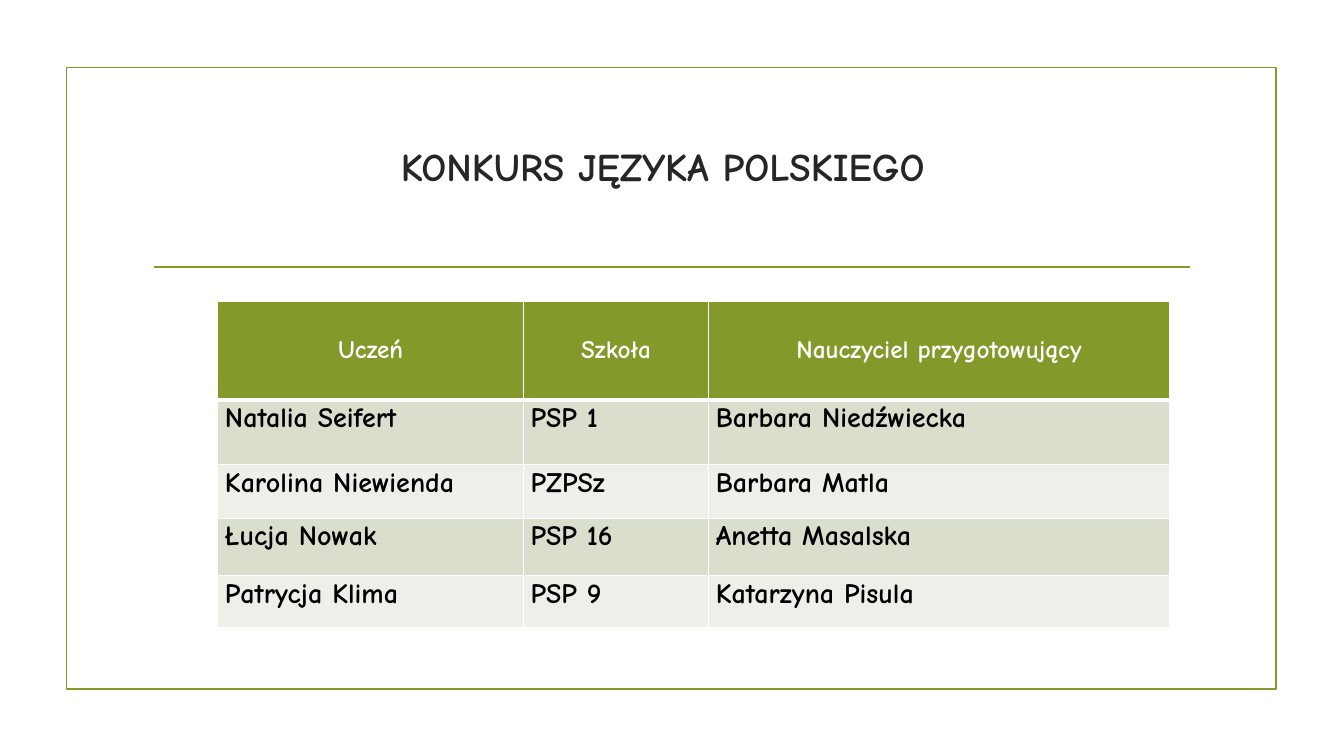
from lxml.etree import SubElement
from pptx import Presentation
from pptx.dml.color import RGBColor
from pptx.enum.shapes import MSO_CONNECTOR, MSO_SHAPE
from pptx.enum.text import MSO_ANCHOR, MSO_AUTO_SIZE, PP_ALIGN
from pptx.oxml.ns import qn
from pptx.util import Cm, Pt

FONT = "Comic Neue"
OLIVE = "83992A"
WHITE = "FFFFFF"
BANDS = ("D9DECD", "EDEFE8")
COLUMN_WIDTHS = (7.7, 4.67, 11.61)
ROW_HEIGHTS = (2.49, 1.63, 1.35, 1.45, 1.3)
RESULTS = (
    ("Uczeń", "Szkoła", "Nauczyciel przygotowujący"),
    ("Natalia Seifert", "PSP 1", "Barbara Niedźwiecka"),
    ("Karolina Niewienda", "PZPSz", "Barbara Matla"),
    ("Łucja Nowak", "PSP 16", "Anetta Masalska"),
    ("Patrycja Klima", "PSP 9", "Katarzyna Pisula"),
)


def color(hex_code):
    """Turn a hex string into a colour."""
    return RGBColor.from_string(hex_code)


def write(text_frame, text, size, hex_code, alignment):
    """Put one bold run into the first paragraph and return that paragraph."""
    paragraph = text_frame.paragraphs[0]
    paragraph.alignment = alignment
    run = paragraph.add_run()
    run.text = text
    run.font.name = FONT
    run.font.size = Pt(size)
    run.font.bold = True
    run.font.color.rgb = color(hex_code)
    return paragraph


def draw_frame(slide, left, top, width, height):
    """Draw the olive frame and the rule under the heading."""
    frame = slide.shapes.add_shape(
        MSO_SHAPE.RECTANGLE, Cm(left), Cm(top), Cm(width), Cm(height))
    frame.shadow.inherit = False
    frame.fill.background()
    rule_y = Cm(top + 5.03)
    rule = slide.shapes.add_connector(
        MSO_CONNECTOR.STRAIGHT, Cm(left + 2.2), rule_y, Cm(left + width - 2.16), rule_y)
    SubElement(rule.element.spPr, qn("a:effectLst"))
    for outline in (frame.line, rule.line):
        outline.color.rgb = color(OLIVE)
        outline.width = Pt(1.25)


def place_heading(slide, left, top, width, height):
    """Fill the title placeholder with the name of the contest."""
    heading = slide.shapes.title
    heading.left, heading.top = Cm(left), Cm(top)
    heading.width, heading.height = Cm(width), Cm(height)
    text_frame = heading.text_frame
    text_frame.auto_size = MSO_AUTO_SIZE.NONE
    text_frame.word_wrap = True
    text_frame.vertical_anchor = MSO_ANCHOR.MIDDLE
    write(text_frame, "KONKURS JĘZYKA POLSKIEGO", 28, "262626", PP_ALIGN.CENTER)


def add_borders(cell, top, bottom):
    """Give a cell white borders with the given top and bottom widths."""
    properties = cell._tc.get_or_add_tcPr()
    for side, width in (("L", 1), ("R", 1), ("T", top), ("B", bottom)):
        border = SubElement(properties, qn(f"a:ln{side}"), w=str(Pt(width)))
        fill = SubElement(border, qn("a:solidFill"))
        SubElement(fill, qn("a:srgbClr"), val=WHITE)


def format_cell(cell, text, row):
    """Write and style a cell of the header or of a banded row."""
    is_header = row == 0
    add_borders(cell, 3 if row == 1 else 1, 3 if is_header else 1)
    cell.fill.solid()
    cell.fill.fore_color.rgb = color(OLIVE if is_header else BANDS[(row - 1) % 2])
    cell.margin_left = cell.margin_right = Cm(0.2 if is_header else 0.18)
    cell.margin_top = cell.margin_bottom = Cm(0.13 if is_header else 0)
    if is_header:
        cell.vertical_anchor = MSO_ANCHOR.MIDDLE
        write(cell.text_frame, text, 18, WHITE, PP_ALIGN.CENTER)
    else:
        cell.vertical_anchor = MSO_ANCHOR.TOP
        entry = write(cell.text_frame, text, 20, "000000", PP_ALIGN.LEFT)
        entry.line_spacing = 1.07


def place_results(slide, left, top):
    """Build the table of pupils, schools and teachers."""
    results = slide.shapes.add_table(
        len(RESULTS), len(COLUMN_WIDTHS), Cm(left), Cm(top),
        Cm(sum(COLUMN_WIDTHS)), Cm(sum(ROW_HEIGHTS))).table
    for column, width in zip(results.columns, COLUMN_WIDTHS):
        column.width = Cm(width)
    for row, height in zip(results.rows, ROW_HEIGHTS):
        row.height = Cm(height)
    for row, entries in enumerate(RESULTS):
        for column, text in enumerate(entries):
            format_cell(results.cell(row, column), text, row)


def main():
    """Build the slide and save it."""
    presentation = Presentation()
    presentation.slide_width = Cm(33.87)
    presentation.slide_height = Cm(19.05)
    slide = presentation.slides.add_slide(presentation.slide_layouts[5])
    draw_frame(slide, 1.68, 1.7, 30.48, 15.67)
    place_heading(slide, 2.87, 2.41, 27.66, 3.56)
    place_results(slide, 5.49, 7.59)
    presentation.save("out.pptx")


if __name__ == "__main__":
    main()
